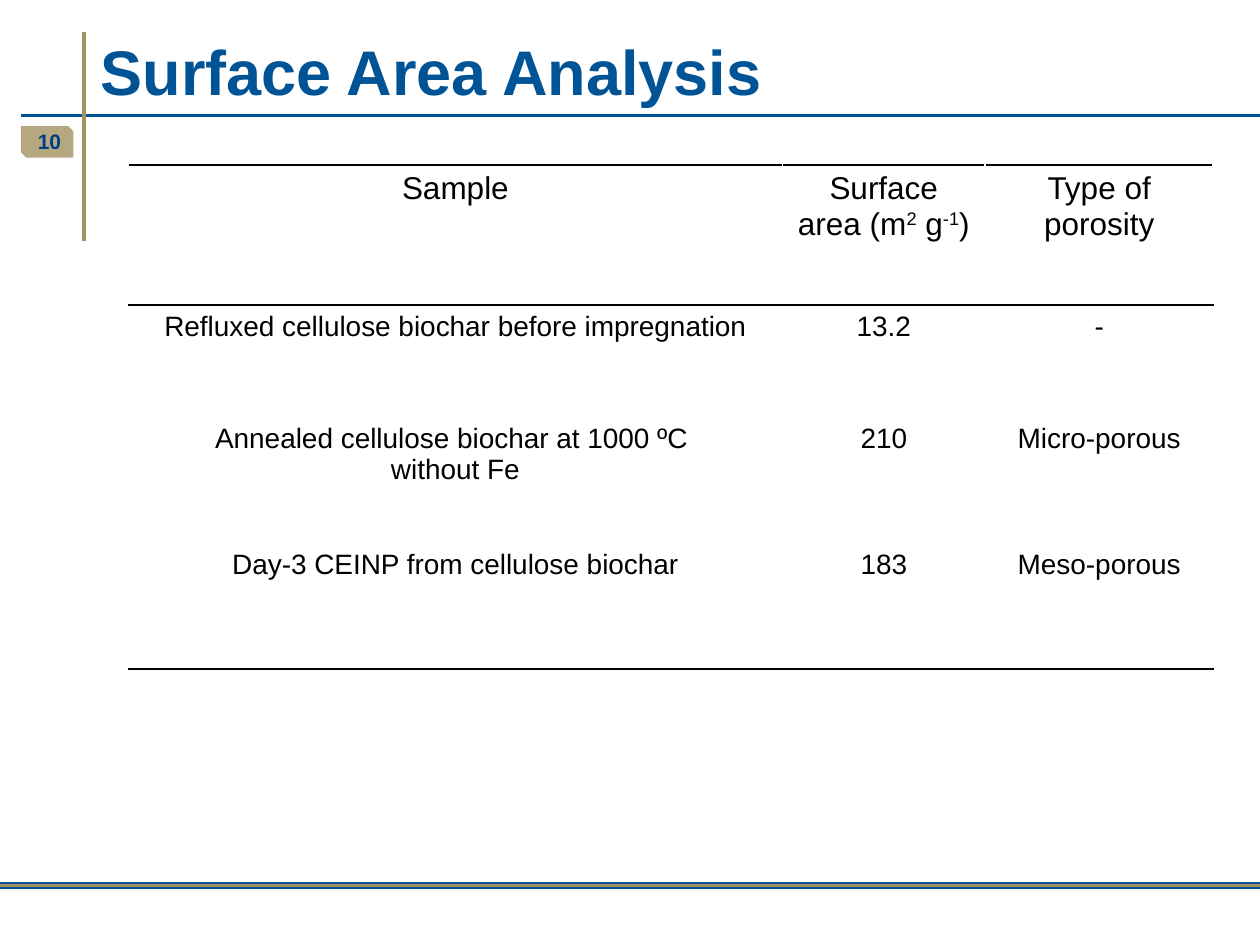
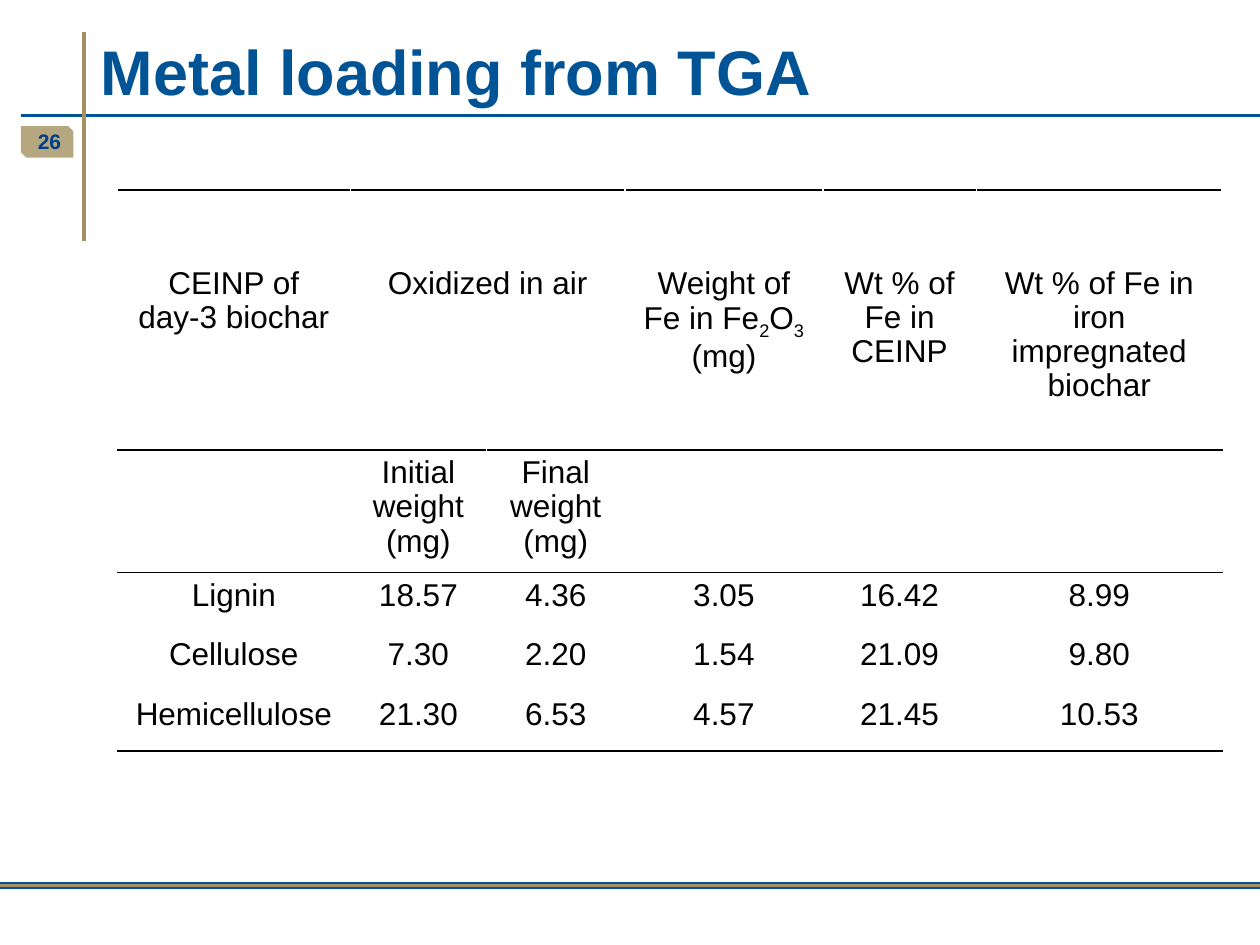
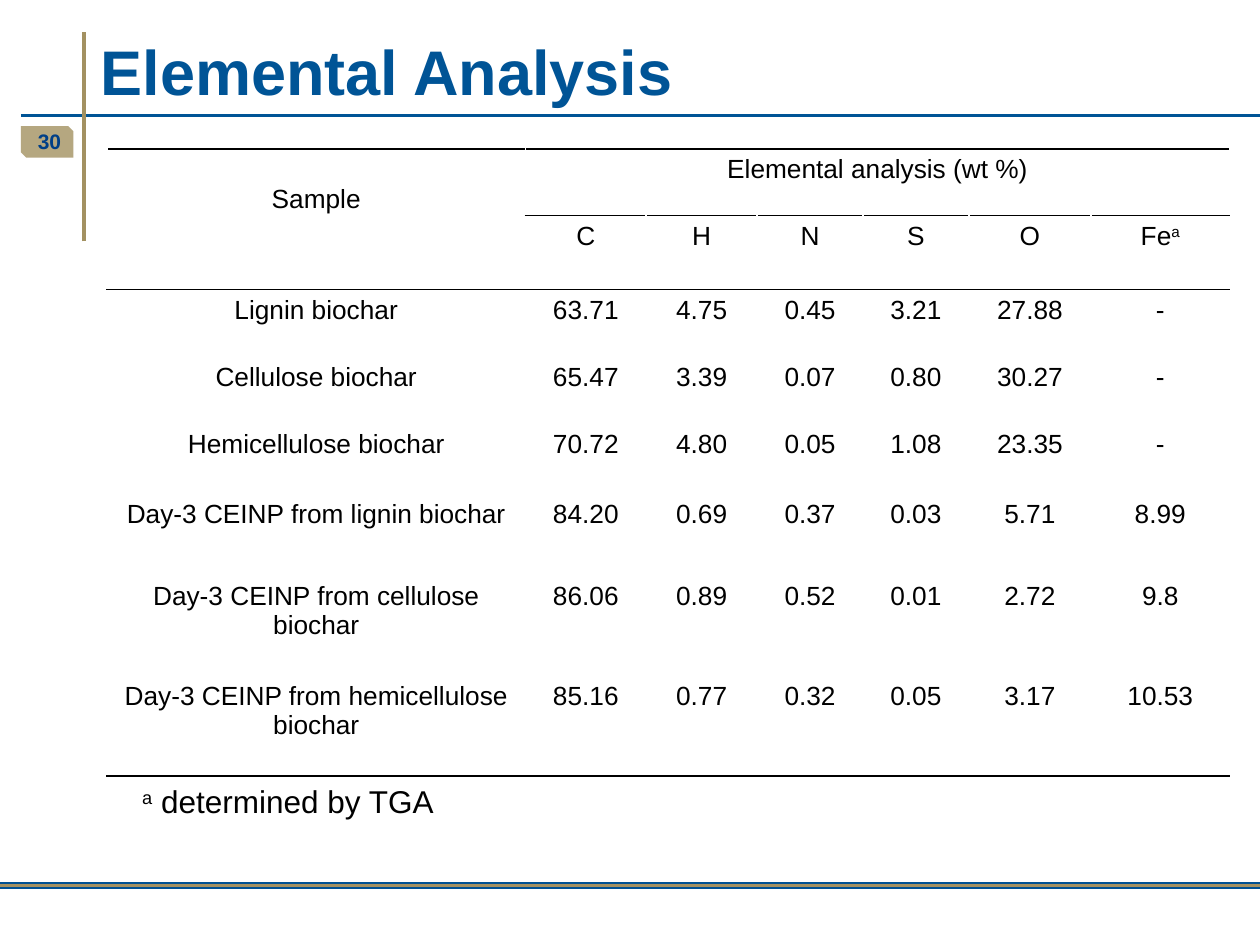
from lxml import etree
from pptx import Presentation
from pptx.dml.color import RGBColor
from pptx.enum import shapes, text
from pptx.oxml.ns import qn
from pptx.util import Pt

FONT = "Arial"
BLACK = RGBColor(0x00, 0x00, 0x00)
WHITE = RGBColor(0xFF, 0xFF, 0xFF)
TITLE_BLUE = RGBColor(0x00, 0x54, 0x96)
FOOTER_BLUE = RGBColor(0x00, 0x52, 0x93)
NUMBER_BLUE = RGBColor(0x00, 0x3F, 0x87)
TAN = RGBColor(0xA3, 0x91, 0x61)

WIDTH, HEIGHT = 720, 540
MARGIN = 3.6
NO_STYLE = "{2D5ABB26-0587-4C30-8999-92F81FD0307C}"
BASELINES = {"^": 30000, "_": -25000}

# x1, y1, x2, y2, colour, weight
RULES = [
    (12, 66, WIDTH, 66, TITLE_BLUE, 2),
    (48, 138, 48, 18, TAN, 2),
    (0, 506, WIDTH, 506, FOOTER_BLUE, 4),
    (0, 506, WIDTH, 506, TAN, 2),
]

# In texts, "|" parts runs; a run that starts with ^ is raised, with _ lowered.
# spans: first row, first column, last row, last column
# drops: extra top margin of a cell, by (row, column)
SLIDES = [
    {
        "title": "Surface Area Analysis",
        "number": 10,
        "at": (73.4, 94.3),
        "cols": [373.7, 115.9, 130.3],
        "heights": [79.9, 64.1, 72, 72],
        "head_rows": 1,
        "sizes": (18, 16),
        "rows": [
            ["Sample", "Surface area (m|^2| g|^-1|)", "Type of porosity"],
            ["Refluxed cellulose biochar before impregnation", "13.2", "-"],
            ["Annealed cellulose biochar at 1000 ºC \nwithout Fe", "210", "Micro-porous"],
            ["Day-3 CEINP from cellulose biochar", "183", "Meso-porous"],
        ],
    },
    {
        "title": "Metal loading from TGA",
        "number": 26,
        "at": (67, 108.7),
        "cols": [133.2, 77.8, 79.2, 113, 87.8, 140.4],
        "heights": [148.5, 68, 34, 34, 34],
        "head_rows": 2,
        "sizes": (18, 18),
        "spacing": 0.97,
        "spans": [(0, 1, 0, 2)],
        "drops": {(0, c): 40.2 for c in range(6)},
        "rows": [
            ["CEINP of day-3 biochar", "Oxidized in air", "", "Weight of Fe in Fe|_2|O|_3| (mg)",
             "Wt % of Fe in CEINP", "Wt % of Fe in iron impregnated biochar"],
            ["", "Initial weight (mg)", "Final weight\n(mg)", "", "", ""],
            ["Lignin", "18.57", "4.36", "3.05", "16.42", "8.99"],
            ["Cellulose", "7.30", "2.20", "1.54", "21.09", "9.80"],
            ["Hemicellulose", "21.30", "6.53", "4.57", "21.45", "10.53"],
        ],
    },
    {
        "title": "Elemental Analysis",
        "number": 30,
        "at": (61.2, 85),
        "cols": [239, 69.1, 63.4, 60.5, 60.5, 69.8, 79.2],
        "heights": [38.2, 40.6, 38.2, 38.2, 40.4, 46.8, 57.2, 57.2],
        "head_rows": 2,
        "sizes": (15, 15),
        "spans": [(0, 0, 1, 0), (0, 1, 0, 6)],
        "drops": {(0, 0): 17},
        "rows": [
            ["Sample", "Elemental analysis (wt %)", "", "", "", "", ""],
            ["", "C", "H", "N", "S", "O", "Fe|^a"],
            ["Lignin biochar", "63.71", "4.75", "0.45", "3.21", "27.88", "-"],
            ["Cellulose biochar", "65.47", "3.39", "0.07", "0.80", "30.27", "-"],
            ["Hemicellulose biochar", "70.72", "4.80", "0.05", "1.08", "23.35", "-"],
            ["Day-3 CEINP from lignin biochar", "84.20", "0.69", "0.37", "0.03", "5.71", "8.99"],
            ["Day-3 CEINP from cellulose biochar", "86.06", "0.89", "0.52", "0.01", "2.72", "9.8"],
            ["Day-3 CEINP from hemicellulose biochar", "85.16", "0.77", "0.32", "0.05", "3.17", "10.53"],
        ],
        "footnote": "^a| determined by TGA",
    },
]


def write(tf, content, size, color=BLACK, bold=False, align=text.PP_ALIGN.LEFT, spacing=None):
    """Fill a text frame: one paragraph a line, one run for each part between bars."""
    for i, line in enumerate(content.split("\n")):
        p = tf.add_paragraph() if i else tf.paragraphs[0]
        p.alignment, p.space_before = align, Pt(0)
        if spacing:
            p.line_spacing = spacing
        p.font.size = Pt(size)
        for part in filter(None, line.split("|")):
            r = p.add_run()
            r.text = part.lstrip("^_")
            for name, value in {"name": FONT, "size": Pt(size), "bold": bold}.items():
                setattr(r.font, name, value)
            r.font.color.rgb = color
            if part[0] in BASELINES:
                r.font._element.set("baseline", str(BASELINES[part[0]]))


def add_rule(s, x1, y1, x2, y2, color, weight):
    line = s.shapes.add_connector(shapes.MSO_CONNECTOR.STRAIGHT, *map(Pt, (x1, y1, x2, y2)))
    line.line.color.rgb = color
    line.line.width = Pt(weight)
    etree.SubElement(line._element.spPr, qn("a:effectLst"))


def add_frame(s, number):
    """Draw the number badge, the rules and the footer band."""
    badge = s.shapes.add_shape(shapes.MSO_SHAPE.SNIP_2_DIAG_RECTANGLE, *map(Pt, (12, 72, 30, 18)))
    badge.shadow.inherit = False
    badge.line.fill.background()
    badge.fill.solid()
    badge.fill.fore_color.rgb = TAN
    color = badge._element.spPr.find(qn("a:solidFill"))[0]
    etree.SubElement(color, qn("a:alpha"), val="80000")
    for rule in RULES:
        add_rule(s, *rule)
    tf = s.shapes.add_textbox(*map(Pt, (0, 66.2, 42, 28.8))).text_frame
    tf.word_wrap = True
    tf.vertical_anchor = text.MSO_ANCHOR.MIDDLE
    write(tf, str(number), 12, NUMBER_BLUE, True, text.PP_ALIGN.RIGHT)


def set_title(s, title):
    sp = s.shapes.title
    place = {"left": 50.4, "top": -0.7, "width": 643, "height": 66.2}
    for name, value in place.items():
        setattr(sp, name, Pt(value))
    tf = sp.text_frame
    tf.auto_size = text.MSO_AUTO_SIZE.NONE
    tf.vertical_anchor = text.MSO_ANCHOR.BOTTOM
    write(tf, title, 36, TITLE_BLUE, True)


def set_borders(cell, **colors):
    tc_pr = cell._tc.get_or_add_tcPr()
    for side in "LRTB":
        ln = etree.SubElement(tc_pr, qn("a:ln" + side), w=str(Pt(1)))
        fill = etree.SubElement(ln, qn("a:solidFill"))
        etree.SubElement(fill, qn("a:srgbClr"), val=str(colors.get(side, WHITE)))


def add_data_table(s, d):
    rows, cols, heights, head = d["rows"], d["cols"], d["heights"], d["head_rows"]
    size = (sum(cols), sum(heights))
    table = s.shapes.add_table(len(rows), len(cols), *map(Pt, d["at"] + size)).table
    table._tbl.tblPr.find(qn("a:tableStyleId")).text = NO_STYLE
    table.first_row = table.horz_banding = False
    for column, width in zip(table.columns, cols):
        column.width = Pt(width)
    for row, height in zip(table.rows, heights):
        row.height = Pt(height)
    for r1, c1, r2, c2 in d.get("spans", []):
        table.cell(r1, c1).merge(table.cell(r2, c2))
    for i, row in enumerate(rows):
        top = BLACK if i <= head else WHITE
        bottom = BLACK if i < head or i == len(rows) - 1 else WHITE
        for j, content in enumerate(row):
            cell = table.cell(i, j)
            if cell.is_spanned:
                continue
            set_borders(cell, T=top, B=bottom)
            cell.fill.background()
            cell.margin_top = Pt(MARGIN + d.get("drops", {}).get((i, j), 0))
            write(cell.text_frame, content, d["sizes"][i >= head],
                  align=text.PP_ALIGN.CENTER, spacing=d.get("spacing"))


def add_footnote(s, note):
    tf = s.shapes.add_textbox(*map(Pt, (74.2, 443.5, 187.2, 28.8))).text_frame
    tf.word_wrap = False
    tf.auto_size = text.MSO_AUTO_SIZE.SHAPE_TO_FIT_TEXT
    write(tf, note, 18)


def main():
    prs = Presentation()
    prs.slide_width, prs.slide_height = Pt(WIDTH), Pt(HEIGHT)
    for d in SLIDES:
        s = prs.slides.add_slide(prs.slide_layouts[5])
        add_frame(s, d["number"])
        set_title(s, d["title"])
        add_data_table(s, d)
        if "footnote" in d:
            add_footnote(s, d["footnote"])
    prs.save("out.pptx")


if __name__ == "__main__":
    main()
